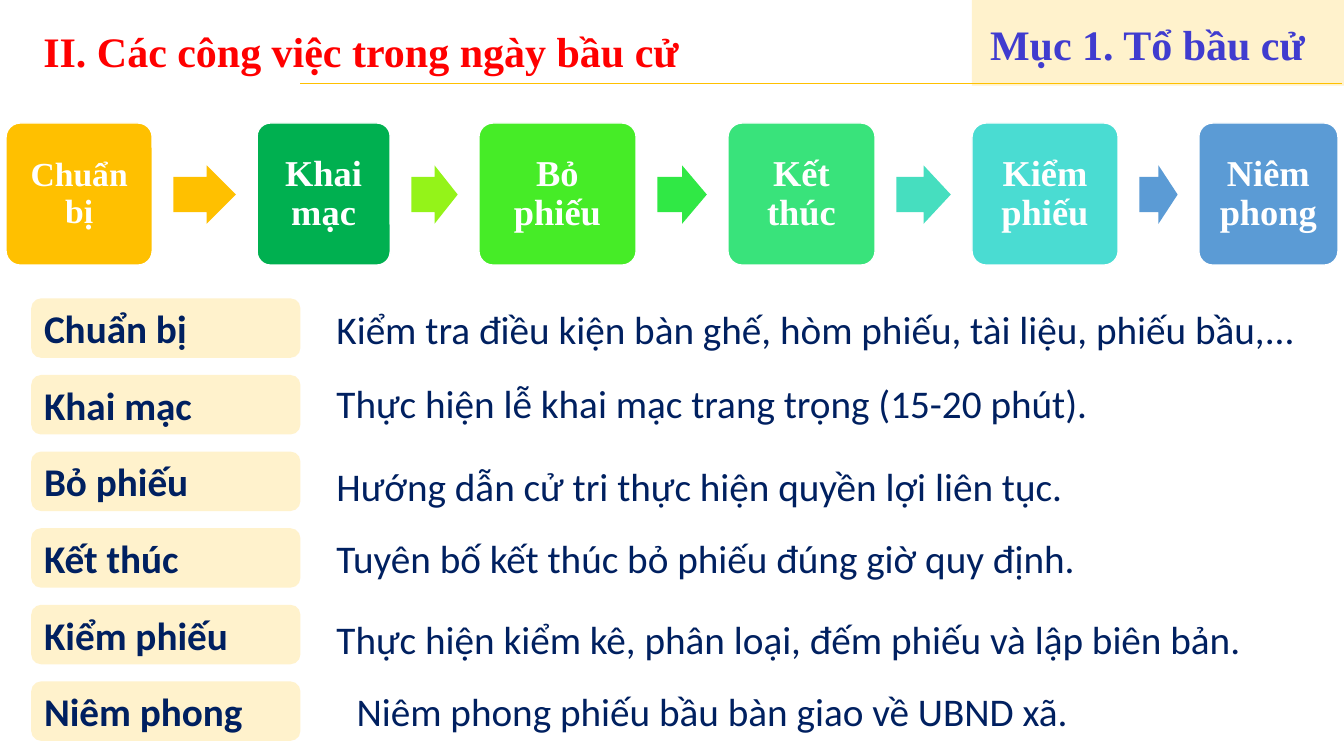
"""Build the slide on the six election-day tasks of the polling team."""
from lxml.etree import SubElement
from pptx import Presentation
from pptx.dml.color import RGBColor
from pptx.enum.shapes import MSO_CONNECTOR, MSO_SHAPE
from pptx.enum.text import MSO_ANCHOR, MSO_AUTO_SIZE, PP_ALIGN
from pptx.oxml.ns import qn
from pptx.util import Pt

PX = 9144
CREAM, NAVY, WHITE = "FFF2CC", "002060", "FFFFFF"
SERIF, SANS = "Times New Roman", "Calibri"


def add_box(kind, bounds, fill=None, line=None):
    shape = slide.shapes.add_shape(kind, *[length * PX for length in bounds])
    shape.shadow.inherit = False
    for part, color in ((shape.fill, fill), (shape.line.fill, line)):
        if color:
            part.solid()
            part.fore_color.rgb = RGBColor.from_string(color)
        else:
            part.background()
    return shape


def write(shape, text, name, size, color, bold=True, align=PP_ALIGN.LEFT,
          spacing=1.0, inset=None, **frame_format):
    frame = shape.text_frame
    frame_values = {"word_wrap": True, "auto_size": MSO_AUTO_SIZE.NONE,
                    "vertical_anchor": MSO_ANCHOR.MIDDLE}
    if inset is not None:
        sides = ("left", "top", "right", "bottom")
        frame_values.update({f"margin_{side}": inset * PX for side in sides})
    for key, value in {**frame_values, **frame_format}.items():
        setattr(frame, key, value)
    paragraph = frame.paragraphs[0]
    for key, value in {"text": text, "alignment": align, "line_spacing": spacing}.items():
        setattr(paragraph, key, value)
    for key, value in {"name": name, "size": Pt(size), "bold": bold}.items():
        setattr(paragraph.font, key, value)
    paragraph.font.color.rgb = RGBColor.from_string(color)


presentation = Presentation()
presentation.slide_width, presentation.slide_height = 1333 * PX, 750 * PX
slide = presentation.slides.add_slide(presentation.slide_layouts[5])

title = slide.shapes.title
for key, value in {"left": 33, "top": 0, "width": 1280, "height": 100}.items():
    setattr(title, key, value * PX)
write(title, "II. Các công việc trong ngày bầu cử", SERIF, 30, "FF0000")

add_box(MSO_SHAPE.RECTANGLE, (964, 0, 369, 85), CREAM)
rule = slide.shapes.add_connector(
    MSO_CONNECTOR.STRAIGHT, 1331 * PX, 83 * PX, 298 * PX, 83 * PX)
rule.line.color.rgb = RGBColor.from_string("FFC000")
rule.line.width = Pt(0.5)
SubElement(rule._element.spPr, qn("a:effectLst"))
section = slide.shapes.add_textbox(982 * PX, 24 * PX, 351 * PX, 41 * PX)
write(section, "Mục 1. Tổ bầu cử", SERIF, 30, "403CCF", spacing=Pt(32.1),
      inset=0, word_wrap=False, vertical_anchor=MSO_ANCHOR.TOP)

steps = [
    ("Chuẩn bị", 6, 145, "FFC000", 24),
    ("Khai mạc", 255, 132, "00B050", 26),
    ("Bỏ phiếu", 475, 156, "46EC27", 26),
    ("Kết thúc", 722, 146, "39E37B", 26),
    ("Kiểm phiếu", 964, 145, "4ADCD2", 26),
    ("Niêm phong", 1189, 138, "5B9BD5", 26),
]
for name, left, width, color, size in steps:
    step = add_box(MSO_SHAPE.ROUNDED_RECTANGLE, (left, 122, width, 141), color, WHITE)
    step.adjustments[0] = 0.1
    step.line.width = Pt(1)
    write(step, name, SERIF, size, WHITE, align=PP_ALIGN.CENTER, spacing=0.9, inset=15)

ARROW_GAP = 21
arrow_colors = ["FFC000", "94F319", "30E845", "46DEBF", "5B9BD5"]
for step, following, color in zip(steps, steps[1:], arrow_colors):
    left = step[1] + step[2] + ARROW_GAP
    width = following[1] - ARROW_GAP - left
    arrow = add_box(MSO_SHAPE.RIGHT_ARROW, (left, 164, width, 58), color)
    arrow.adjustments[0] = 0.6

tasks = [
    (321, 297, "Kiểm tra điều kiện bàn ghế, hòm phiếu, tài liệu, phiếu bầu,..."),
    (321, 370, "Thực hiện lễ khai mạc trang trọng (15-20 phút)."),
    (321, 452, "Hướng dẫn cử tri thực hiện quyền lợi liên tục."),
    (321, 524, "Tuyên bố kết thúc bỏ phiếu đúng giờ quy định."),
    (321, 604, "Thực hiện kiểm kê, phân loại, đếm phiếu và lập biên bản."),
    (341, 676, "Niêm phong phiếu bầu bàn giao về UBND xã."),
]
for row, (step, (left, top, text)) in enumerate(zip(steps, tasks)):
    label = add_box(MSO_SHAPE.ROUNDED_RECTANGLE, (31, 296 + 76 * row, 267, 59), CREAM)
    write(label, step[0], SANS, 28, NAVY)
    description = add_box(MSO_SHAPE.ROUNDED_RECTANGLE, (left, top, 992, 59))
    write(description, text, SANS, 28, NAVY, bold=False)

presentation.save("out.pptx")
